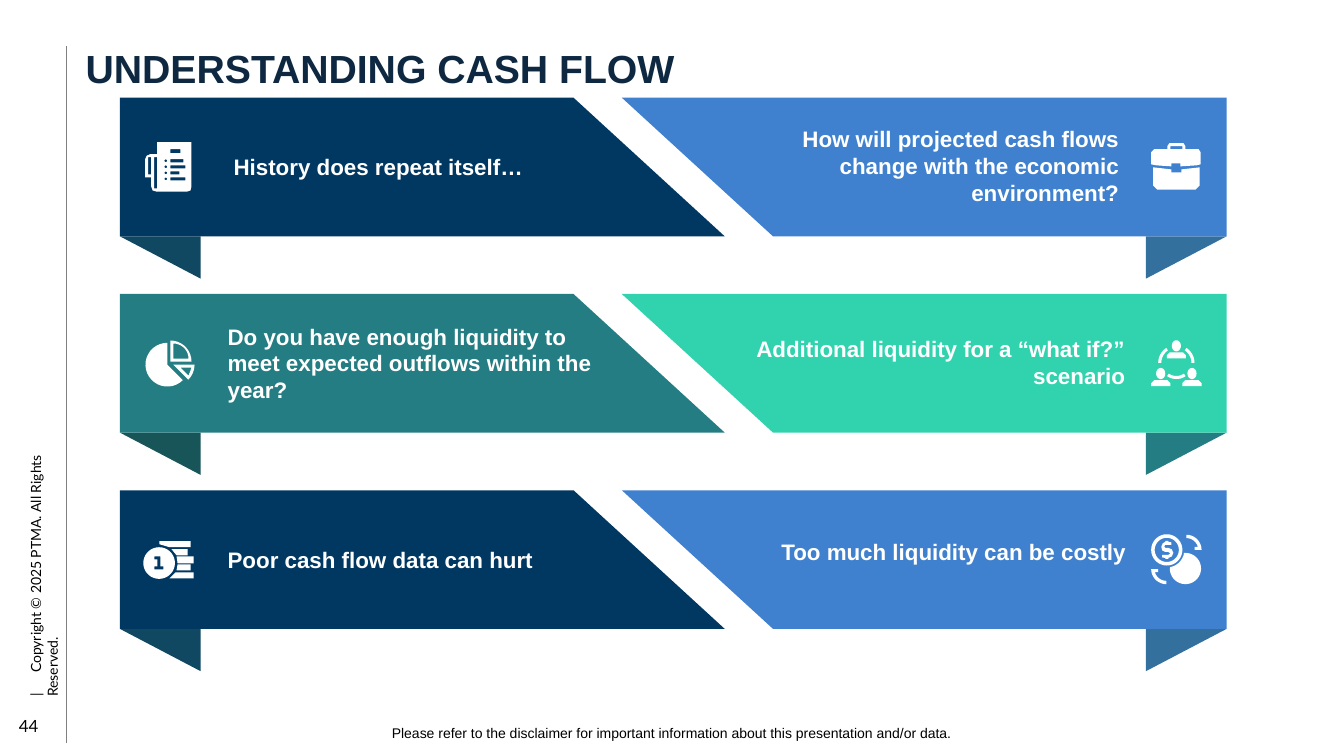
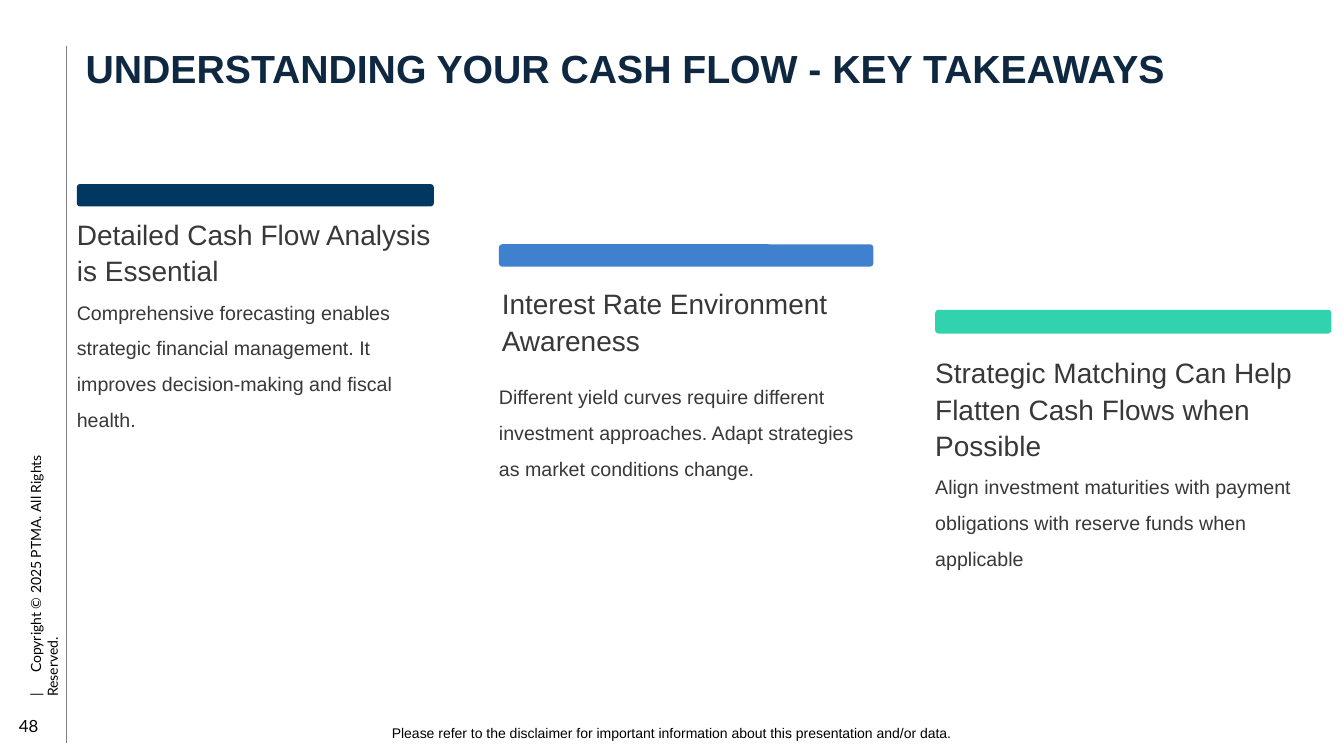
from dataclasses import dataclass
from math import cos, radians, sin
from typing import NamedTuple, Optional

from lxml.etree import SubElement
from pptx import Presentation
from pptx.dml.color import RGBColor
from pptx.enum.shapes import MSO_CONNECTOR as Connector, MSO_SHAPE as Preset
from pptx.enum.text import MSO_ANCHOR as Anchor, MSO_AUTO_SIZE as AutoSize, PP_ALIGN as Align
from pptx.oxml.ns import qn
from pptx.shapes.autoshape import Shape
from pptx.slide import Slide
from pptx.util import Pt

Points = list[tuple[float, float]]


class Style(NamedTuple):
    size: float
    color: str
    bold: bool = False
    font: str = "Arial"
    spacing: Optional[float] = None  # a multiple of the line, or points when above 5


@dataclass(frozen=True)
class Theme:
    navy: str = "003862"
    navy_fold: str = "104862"
    blue: str = "3F81CF"
    blue_fold: str = "33709D"
    teal: str = "247D82"
    teal_fold: str = "185558"
    mint: str = "31D3AE"
    white: str = "FFFFFF"
    rule: str = "808080"
    title: Style = Style(28, "0E2841", True, spacing=0.9)
    ribbon: Style = Style(16, "FFFFFF", True)
    heading: Style = Style(20, "383838", spacing=26)
    body: Style = Style(14, "383838", spacing=25.5)
    footer: Style = Style(10, "000000")
    copyright: Style = Style(10, "000000", font="Lato")
    number: Style = Style(12, "000000", font="Lato")


THEME = Theme()


class Frame(NamedTuple):
    left: float
    top: float
    width: float
    height: float


class Ribbon(NamedTuple):
    text: str
    frame: Frame
    fill: str
    fold: str
    icon: list[Points]
    icon_left: float
    icon_top: float


class Takeaway(NamedTuple):
    fill: str
    bar: Frame
    heading: str
    heading_frame: Frame
    body: str
    body_frame: Frame


# Outline helpers
def rect(left: float, top: float, right: float, bottom: float) -> Points:
    return [(left, top), (right, top), (right, bottom), (left, bottom)]


def arc(x: float, y: float, rx: float, start: float, end: float,
        ry: Optional[float] = None) -> Points:
    steps = max(4, round(abs(end - start) / 10))
    angles = [radians(start + (end - start) * i / steps) for i in range(steps + 1)]
    return [(x + rx * cos(a), y + (ry or rx) * sin(a)) for a in angles]


def disc(x: float, y: float, rx: float, ry: Optional[float] = None) -> Points:
    return arc(x, y, rx, 0, 360, ry)


def wedge(x: float, y: float, radius: float, start: float, end: float) -> Points:
    return [(x, y)] + arc(x, y, radius, start, end)


def band(x: float, y: float, outer: float, inner: float, start: float, end: float) -> Points:
    return arc(x, y, outer, start, end) + arc(x, y, inner, end, start)


def person(dx: float, dy: float) -> list[Points]:
    body = [(3, 40), (16, 40), (19, 43), (19, 46), (0, 46), (0, 43)]
    return [[(x + dx, y + dy) for x, y in body], disc(9.5 + dx, 33.5 + dy, 4.5, 5.5)]


# Icons on a grid of about 50 units; inner outlines become holes
ICON_UNIT = 0.72
NEWSPAPER = [
    [(12, 0), (12, 12), (5, 12), (1.5, 13.5), (0, 17), (0, 35), (6, 35), (6, 44),
     (7.5, 48), (11, 49), (42, 49), (45, 48), (46, 44), (46, 0)],
    rect(25, 7, 35, 11), rect(25, 17, 38, 20), rect(25, 23, 40, 26),
    rect(25, 29, 34, 32), rect(25, 35, 40, 38), rect(3, 15, 6, 32), rect(9, 15, 12, 46),
    *[disc(20.5, 18.5 + 6 * i, 1.3) for i in range(4)],
]
PIE = [
    wedge(22, 24, 21.7, 45, 270),
    wedge(25, 21, 21, -90, 0), wedge(28, 18, 15, -90, 0),
    wedge(28, 24, 21, 0, 45), [(35, 27), (46, 27), (43, 35)],
]
COINS = [
    [(16, 0), (47, 0), (47, 6), (26, 6), (16, 3)],
    [(28, 8), (44, 8), (44, 14), (33, 14)],
    [(33, 15), (50, 15), (50, 22), (34, 22)],
    [(34, 23), (47, 23), (47, 29), (33, 29)],
    [(32, 31), (50, 31), (50, 37), (26, 37)],
    disc(15.7, 21.7, 15.7),
    [(11, 15), (11, 18), (14, 18), (14, 25), (11, 25), (11, 28),
     (20, 28), (20, 25), (17, 25), (17, 15)],
]
BRIEFCASE = [
    [(0, 9), (3, 6), (16, 6), (16, 3), (18, 0), (32, 0), (34, 3), (34, 6), (47, 6),
     (49, 9), (49, 21), (45, 22), (29, 23), (29, 20), (20, 20), (20, 23), (5, 22), (0, 21)],
    rect(19, 3, 31, 6),
    [(2, 24), (20, 26), (20, 29), (30, 29), (30, 26), (48, 24),
     (48, 42), (44, 46), (6, 46), (2, 42)],
]
TEAM = [
    *person(0, 0), *person(31, 0), *person(15.5, -27.5),
    band(25, 23, 18, 15, -56, 0), band(25, 23, 18, 15, 180, 236), band(25, 23, 16, 13, 55, 125),
]
TURN = arc(35, 15, 15, -90, 0) + [(43, 15), (43, 12), (46, 12)] + arc(35, 15, 11.7, -15, -90)
EXCHANGE = [
    arc(34, 33.5, 15.5, -97, 180) + arc(15.5, 15, 17.5, 79, 10),
    disc(15.5, 15, 15.5), disc(15.5, 15, 12),
    [(14, 6), (17, 6), (17, 7), (20, 7.5), (20, 10), (14, 10), (13, 11.5), (14, 13),
     (17, 13), (20.5, 14.5), (22, 18), (20.5, 21.5), (17, 23), (17, 24), (14, 24),
     (14, 23), (11, 22.5), (11, 20), (17, 20), (19, 18.5), (17, 17), (14, 17),
     (11, 15.5), (10, 12), (11.5, 8.5), (14, 7)],
    TURN, [(50 - x, 49 - y) for x, y in TURN],
]

# Slide content
LEFT_RIBBONS = [
    Ribbon("History does repeat itself…", Frame(159.8, 105.8, 288.7, 26.6),
           THEME.navy, THEME.navy_fold, NEWSPAPER, 103.7, 101.5),
    Ribbon("Do you have enough liquidity to meet expected outflows within the year?",
           Frame(155.5, 226.1, 288.7, 65.5),
           THEME.teal, THEME.teal_fold, PIE, 103.7, 243.2),
    Ribbon("Poor cash flow data can hurt", Frame(155.5, 386.6, 288.7, 26.6),
           THEME.navy, THEME.navy_fold, COINS, 102.4, 386.6),
]
RIGHT_RIBBONS = [
    Ribbon("How will projected cash flows change with the economic environment?",
           Frame(519.8, 85, 286.6, 65.5),
           THEME.blue, THEME.blue_fold, BRIEFCASE, 822.3, 102.3),
    Ribbon("Additional liquidity for a “what if?” scenario", Frame(523.4, 235.4, 287.3, 46.1),
           THEME.mint, THEME.teal, TEAM, 822.3, 242.7),
    Ribbon("Too much liquidity can be costly", Frame(522.7, 380.9, 288.7, 26.6),
           THEME.blue, THEME.blue_fold, EXCHANGE, 822.3, 382),
]
TAKEAWAYS = [
    Takeaway(THEME.navy, Frame(54.9, 131.5, 255, 16),
             "Detailed Cash Flow Analysis is Essential", Frame(54.9, 153.4, 254.5, 52.6),
             "Comprehensive forecasting enables strategic financial management. "
             "It improves decision-making and fiscal health.", Frame(54.9, 206, 255, 116)),
    Takeaway(THEME.blue, Frame(356.4, 174.5, 267.4, 16),
             "Interest Rate Environment Awareness", Frame(358.4, 203, 262.8, 52.6),
             "Different yield curves require different investment approaches. "
             "Adapt strategies as market conditions change.", Frame(356.4, 266.6, 272.2, 77)),
    Takeaway(THEME.mint, Frame(668, 221.3, 283, 17),
             "Strategic Matching Can Help Flatten Cash Flows when Possible",
             Frame(668, 252.2, 283, 52.6),
             "Align investment maturities with payment obligations with reserve funds "
             "when applicable", Frame(668, 330.6, 275, 77)),
]


def paint(shape: Shape, color: str) -> None:
    shape.shadow.inherit = False
    shape.fill.solid()
    shape.fill.fore_color.rgb = RGBColor.from_string(color)
    shape.line.fill.background()


def place(shape: Shape, frame: Frame) -> None:
    shape.left, shape.top, shape.width, shape.height = map(Pt, frame)


def write(shape: Shape, text: str, style: Style, align: Align = Align.LEFT,
          anchor: Anchor = Anchor.TOP, inset: bool = True, tab: float = 0) -> None:
    box = shape.text_frame
    box.word_wrap, box.auto_size, box.vertical_anchor = True, AutoSize.NONE, anchor
    box.margin_left = box.margin_right = Pt(7.2 if inset else 0)
    box.margin_top = box.margin_bottom = Pt(3.6 if inset else 0)
    para = box.paragraphs[0]
    para.alignment = align
    if style.spacing:
        para.line_spacing = Pt(style.spacing) if style.spacing > 5 else style.spacing
    if tab:
        stops = SubElement(para._p.get_or_add_pPr(), qn("a:tabLst"))
        SubElement(stops, qn("a:tab"), pos=str(Pt(tab)), algn="l")
    span = para.add_run()
    span.text = text
    span.font.name, span.font.size, span.font.bold = style.font, Pt(style.size), style.bold
    span.font.color.rgb = RGBColor.from_string(style.color)


def add_text(page: Slide, frame: Frame, text: str, style: Style, **layout) -> Shape:
    shape = page.shapes.add_textbox(*map(Pt, frame))
    write(shape, text, style, **layout)
    return shape


def add_outline(page: Slide, outlines: list[Points], color: str) -> None:
    scaled = [[(Pt(x), Pt(y)) for x, y in outline] for outline in outlines]
    builder = page.shapes.build_freeform(*scaled[0][0])
    for index, outline in enumerate(scaled):
        if index:
            builder.move_to(*outline[0])
        builder.add_line_segments(outline[1:], close=True)
    paint(builder.convert_to_shape(), color)


def add_ribbon(page: Slide, ribbon: Ribbon, row: int, right: bool) -> None:
    edge, side = (876.2, -1) if right else (85.7, 1)
    top = 69.8 + 140.2 * row
    bottom = top + 99
    upper, lower = (432, 324) if right else (324, 432)
    fold = edge + side * 57.6
    add_outline(page, [[(edge, bottom), (fold, bottom), (fold, bottom + 30.2)]], ribbon.fold)
    add_outline(page, [[(edge, top), (edge, bottom), (edge + side * lower, bottom),
                        (edge + side * upper, top)]], ribbon.fill)
    add_text(page, ribbon.frame, ribbon.text, THEME.ribbon,
             align=Align.RIGHT if right else Align.LEFT, anchor=Anchor.BOTTOM)
    icon = [[(ribbon.icon_left + x * ICON_UNIT, ribbon.icon_top + y * ICON_UNIT)
             for x, y in outline] for outline in ribbon.icon]
    add_outline(page, icon, THEME.white)


def add_takeaway(page: Slide, item: Takeaway) -> None:
    bar = page.shapes.add_shape(Preset.ROUNDED_RECTANGLE, *map(Pt, item.bar))
    bar.adjustments[0] = 0.15
    paint(bar, item.fill)
    add_text(page, item.heading_frame, item.heading, THEME.heading, inset=False)
    add_text(page, item.body_frame, item.body, THEME.body, inset=False)


def add_page(deck: Presentation, title: str, number: int) -> Slide:
    page = deck.slides.add_slide(deck.slide_layouts[5])
    place(page.shapes.title, Frame(61.2, 35.3, 874.8, 56.9))
    write(page.shapes.title, title, THEME.title, inset=False)

    # Side rule and copyright line
    rule = page.shapes.add_connector(Connector.STRAIGHT, Pt(47.5), Pt(33.1), Pt(47.5), Pt(530.6))
    rule.line.color.rgb = RGBColor.from_string(THEME.rule)
    rule.line.width = Pt(0.75)
    SubElement(rule._element.spPr, qn("a:effectLst"))
    notice = add_text(page, Frame(-85.7, 383.8, 222.5, 19.4),
                      "|\tCopyright © 2025 PTMA. All Rights Reserved.", THEME.copyright, tab=17)
    notice.rotation = 270

    # Footer
    add_text(page, Frame(4.3, 504, 30.2, 28.8), str(number), THEME.number,
             align=Align.RIGHT, anchor=Anchor.MIDDLE)
    add_text(page, Frame(220.3, 514.1, 518.4, 19.4),
             "Please refer to the disclaimer for important information about this "
             "presentation and/or data.", THEME.footer, align=Align.CENTER)
    return page


def main() -> None:
    deck = Presentation()
    deck.slide_width, deck.slide_height = Pt(960), Pt(540)

    ribbons = add_page(deck, "UNDERSTANDING CASH FLOW", 44)
    for row, (left, right) in enumerate(zip(LEFT_RIBBONS, RIGHT_RIBBONS)):
        add_ribbon(ribbons, left, row, right=False)
        add_ribbon(ribbons, right, row, right=True)

    takeaways = add_page(deck, "UNDERSTANDING YOUR CASH FLOW - KEY TAKEAWAYS", 48)
    for item in TAKEAWAYS:
        add_takeaway(takeaways, item)

    deck.save("out.pptx")


if __name__ == "__main__":
    main()
